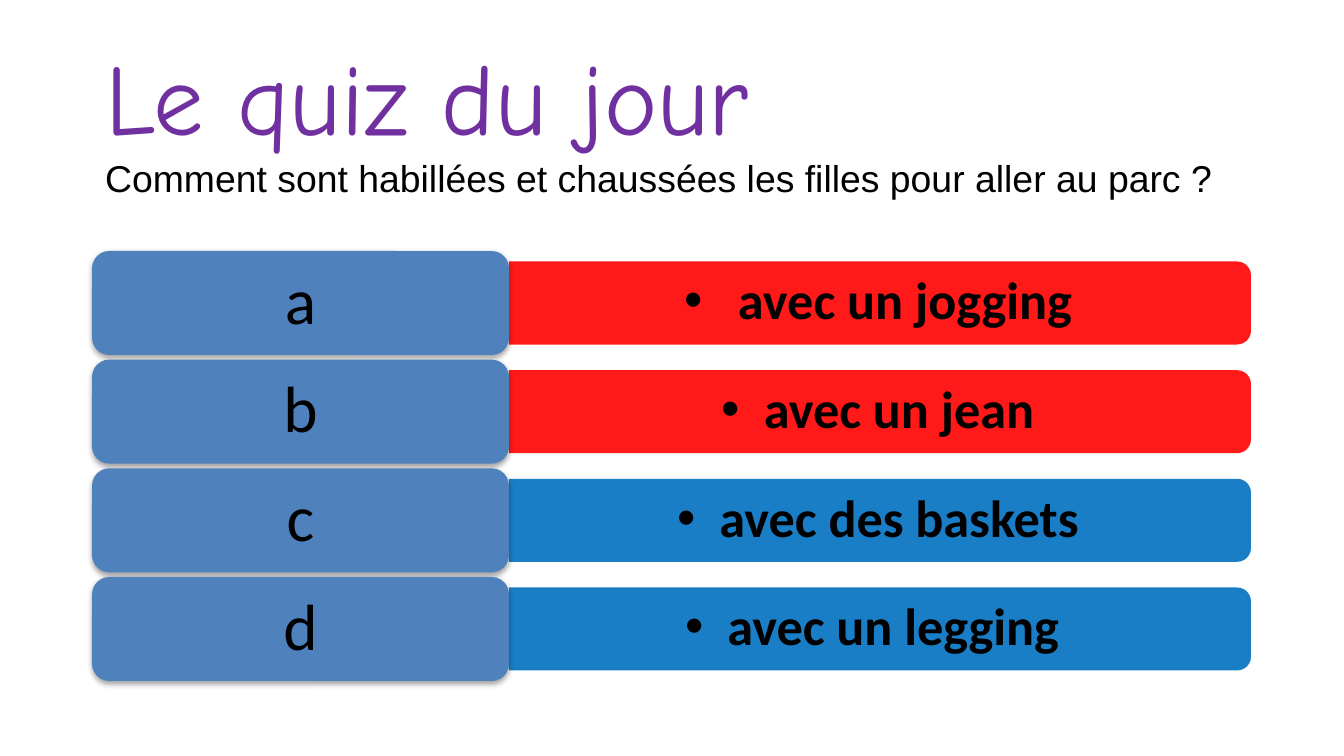
from dataclasses import dataclass

from lxml import etree
from pptx import Presentation
from pptx import util as u
from pptx.dml.color import RGBColor
from pptx.enum import shapes, text
from pptx.oxml import ns

SCALE = 9144000 / 1344
SLIDE_WIDTH, SLIDE_HEIGHT = 1344, 756


@dataclass(frozen=True)
class Theme:
    """Colours, fonts and type sizes of the quiz."""
    purple: str = "7030A0"
    black: str = "000000"
    label: str = "4F81BD"
    red: str = "FF0000"
    blue: str = "0070C0"
    heading_font: str = "Comic Neue"
    question_font: str = "Arial"
    answer_font: str = "Calibri"
    heading_size: int = 54
    question_size: int = 20
    letter_size: int = 35
    answer_size: int = 28


THEME = Theme()
CHOICES = [
    ("a", " avec un jogging", THEME.red),
    ("b", "avec un jean", THEME.red),
    ("c", "avec des baskets", THEME.blue),
    ("d", "avec un legging ", THEME.blue),
]


def px(length):
    """Turn pixels into EMU."""
    return u.Emu(round(length * SCALE))


def box_emu(*box):
    """Turn a left, top, width, height box into EMU."""
    return [px(length) for length in box]


def add_xml(parent, tag, **attributes):
    """Append a DrawingML element and return it."""
    return etree.SubElement(parent, ns.qn(tag), attributes)


def write(paragraph, words, *, font, size, color=THEME.black, bold=False):
    """Add formatted words to a paragraph."""
    run = paragraph.add_run()
    run.text = words
    run.font.name = font
    run.font.size = u.Pt(size)
    run.font.bold = bold
    run.font.color.rgb = RGBColor.from_string(color)


def prepare(frame, side, edge, align=text.PP_ALIGN.CENTER, spacing=0.9):
    """Set up a middle-anchored text frame and return its first paragraph."""
    frame.word_wrap = True
    frame.auto_size = text.MSO_AUTO_SIZE.NONE
    frame.vertical_anchor = text.MSO_ANCHOR.MIDDLE
    frame.margin_left = frame.margin_right = px(side)
    frame.margin_top = frame.margin_bottom = px(edge)
    paragraph = frame.paragraphs[0]
    paragraph.alignment = align
    paragraph.line_spacing = spacing
    return paragraph


def add_panel(slide, preset, box, color):
    """Add a plain filled shape without outline."""
    panel = slide.shapes.add_shape(preset, *box_emu(*box))
    panel.shadow.inherit = False
    panel.fill.solid()
    panel.fill.fore_color.rgb = RGBColor.from_string(color)
    panel.line.fill.background()
    return panel


def add_heading(slide, left, top, width, height):
    """Place the quiz title with its question below."""
    heading = slide.shapes.title
    heading.left, heading.top, heading.width, heading.height = box_emu(left, top, width, height)
    paragraph = prepare(heading.text_frame, 13, 7, text.PP_ALIGN.LEFT, 1.0)
    write(paragraph, "Le quiz du jour", font=THEME.heading_font,
          size=THEME.heading_size, color=THEME.purple)
    paragraph.add_line_break()
    write(paragraph, "Comment sont habillées et chaussées les filles pour aller au parc ?",
          font=THEME.question_font, size=THEME.question_size)


def add_answer(slide, left, top, width, height, words, color):
    """Place an answer bar rounded on its right side."""
    bar_left, bar_top = left + (width - height) / 2, top + (height - width) / 2
    bar = add_panel(slide, shapes.MSO_SHAPE.ROUND_2_SAME_RECTANGLE,
                    (bar_left, bar_top, height, width), color)
    bar.rotation = 90
    fill = bar.fill.fore_color._xFill
    add_xml(fill.find(ns.qn("a:srgbClr")), "a:alpha", val="90000")

    answer = slide.shapes.add_textbox(*box_emu(left, top + 4, width - 4, height - 8))
    paragraph = prepare(answer.text_frame, 16, 8)
    paragraph.level = 1
    properties = paragraph._p.get_or_add_pPr()
    properties.set("marL", str(px(42)))
    properties.set("indent", str(-px(42)))
    add_xml(properties, "a:buFont", typeface="Arial")
    add_xml(properties, "a:buChar", char="•")
    write(paragraph, words, font=THEME.answer_font, size=THEME.answer_size, bold=True)


def add_letter(slide, left, top, width, height, letter):
    """Place a rounded letter label with a soft shadow."""
    label = add_panel(slide, shapes.MSO_SHAPE.ROUNDED_RECTANGLE,
                      (left, top, width, height), THEME.label)
    effects = label._element.spPr.find(ns.qn("a:effectLst"))
    shadow = add_xml(effects, "a:outerShdw", blurRad="40000", dist="20000",
                     dir="5400000", rotWithShape="0")
    shade = add_xml(shadow, "a:srgbClr", val=THEME.black)
    add_xml(shade, "a:alpha", val="38000")
    paragraph = prepare(label.text_frame, 25, 14)
    write(paragraph, letter, font=THEME.answer_font, size=THEME.letter_size)


def add_choices(slide, left, top, width, height):
    """Stack the lettered choices evenly in the given box."""
    letter_width, letter_height, answer_height = 417, 104, 83
    pitch = (height - letter_height) / (len(CHOICES) - 1)
    inset = (letter_height - answer_height) / 2
    for row, (letter, words, color) in enumerate(CHOICES):
        row_top = top + row * pitch
        add_answer(slide, left + letter_width, row_top + inset,
                   width - letter_width, answer_height, words, color)
        add_letter(slide, left, row_top, letter_width, letter_height, letter)


def main():
    """Build and save the quiz slide."""
    deck = Presentation()
    deck.slide_width, deck.slide_height = px(SLIDE_WIDTH), px(SLIDE_HEIGHT)
    slide = deck.slides.add_slide(deck.slide_layouts[5])
    add_heading(slide, 92, 27, 1159, 181)
    add_choices(slide, 92, 251, 1159, 430)
    deck.save("out.pptx")


if __name__ == "__main__":
    main()
